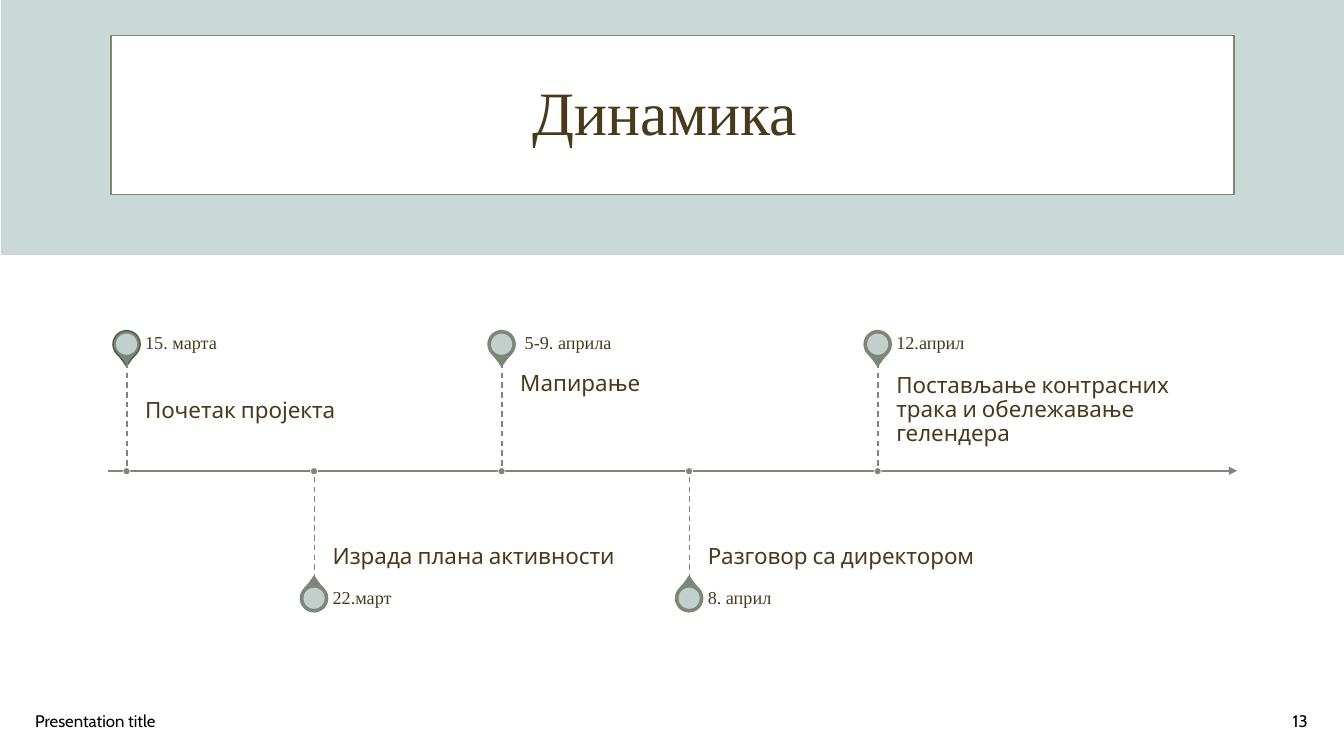
import pptx
import pptx.dml.color
import pptx.enum.dml
import pptx.enum.shapes
import pptx.enum.text
import pptx.oxml.ns
import pptx.util
from lxml import etree

RGBColor = pptx.dml.color.RGBColor
Shape = pptx.enum.shapes.MSO_SHAPE
Anchor = pptx.enum.text.MSO_ANCHOR
Align = pptx.enum.text.PP_ALIGN
qn = pptx.oxml.ns.qn

PALE = RGBColor(0xCA, 0xD8, 0xD6)
PALE_WARM = RGBColor(0xCC, 0xD8, 0xD6)
OLIVE = RGBColor(0x7E, 0x86, 0x79)
DARK_OLIVE = RGBColor(0x4F, 0x59, 0x45)
BROWN = RGBColor(0x4A, 0x3A, 0x1C)
BLACK = RGBColor(0, 0, 0)
WHITE = RGBColor(0xFF, 0xFF, 0xFF)
SERIF, SANS = "Times New Roman", "Cabin"

EMU_PER_PX = 9144  # 100 px to the inch
AXIS_Y = 467
FIRST_X = 126

# date, activity, top of the activity text, pin outline, disc colour
MILESTONES = [
    ("15. марта", "Почетак пројекта", 387, DARK_OLIVE, PALE),
    ("22.март", "Израда плана активности", 467, OLIVE, PALE),
    ("\u00a05-9. априла".replace("\u00a0", " "), "Мапирање", 360, OLIVE, PALE_WARM),
    ("8. април", "Разговор са директором", 467, OLIVE, PALE),
    ("12.април", "Постављање контрасних трака и обележавање гелендера",
     360, OLIVE, PALE_WARM),
]


def px(value):
    return pptx.util.Emu(value * EMU_PER_PX)


class TimelineSlide:
    def __init__(self, presentation):
        self.slide = presentation.slides.add_slide(presentation.slide_layouts[5])
        self.shapes = self.slide.shapes

    def format_text(self, shape, text, size, font, color, align=Align.LEFT,
                    anchor=Anchor.MIDDLE, insets=(10, 5, 10, 5), spacing=0.9):
        frame = shape.text_frame
        frame.word_wrap = True
        frame.vertical_anchor = anchor
        (frame.margin_left, frame.margin_top,
         frame.margin_right, frame.margin_bottom) = map(px, insets)
        paragraph = frame.paragraphs[0]
        paragraph.text = text
        paragraph.alignment = align
        paragraph.line_spacing = spacing
        paragraph.font.size = pptx.util.Pt(size)
        paragraph.font.name = font
        paragraph.font.color.rgb = color

    def title(self, box, text):
        """Place the title in front of the shapes drawn so far."""
        title = self.shapes.title
        title.left, title.top, title.width, title.height = map(px, box)
        self.format_text(title, text, 44, SERIF, BROWN, Align.CENTER)
        title.element.getparent().append(title.element)

    def text(self, box, text, size, font, color, **style):
        self.format_text(self.shapes.add_textbox(*map(px, box)),
                         text, size, font, color, **style)

    def shape(self, kind, box, fill, line=None, width=1):
        shape = self.shapes.add_shape(kind, *map(px, box))
        shape.shadow.inherit = False
        shape.fill.solid()
        shape.fill.fore_color.rgb = fill
        if line is None:
            shape.line.fill.background()
        else:
            shape.line.color.rgb = line
            shape.line.width = pptx.util.Pt(width)
        return shape

    def line(self, start, end, width, dashed=False, arrow=False):
        connector = self.shapes.add_connector(
            pptx.enum.shapes.MSO_CONNECTOR.STRAIGHT, *map(px, start + end))
        connector.line.color.rgb = OLIVE
        connector.line.width = pptx.util.Pt(width)
        if dashed:
            connector.line.dash_style = pptx.enum.dml.MSO_LINE.DASH
        if arrow:
            etree.SubElement(connector.line._get_or_add_ln(), qn("a:tailEnd"), type="triangle")
        etree.SubElement(connector.element.spPr, qn("a:effectLst"))

    def pin(self, x, top, rotation, outline, disc_color):
        drop = self.shape(Shape.TEAR, (x - 14, top, 27, 27), OLIVE, outline)
        drop.adjustments[0] = 1.15
        drop.rotation = rotation
        disc = self.shape(Shape.OVAL, (x - 11, top + 3, 21, 21), disc_color)
        color = disc.element.spPr.find(qn("a:solidFill"))[0]
        etree.SubElement(color, qn("a:alpha"), val="90000")

    def milestone(self, x, above, date, activity, activity_top, outline, disc_color):
        if above:
            pin_top, rotation, date_top, tip = 328, 135, 322, 360
            bottom, anchor, insets = AXIS_Y, Anchor.TOP, (0, 11, 11, 17)
        else:
            pin_top, rotation, date_top, tip = 580, 315, 575, 575
            bottom, anchor, insets = 574, Anchor.BOTTOM, (0, 17, 0, 11)
        self.pin(x, pin_top, rotation, outline, disc_color)
        self.text((x + 18, activity_top, 310, bottom - activity_top), activity,
                  16, SANS, BROWN, anchor=anchor, insets=insets)
        self.text((x + 18, date_top, 310, 38), date, 13, SERIF, BROWN,
                  insets=(0, 0, 9, 0))
        self.line((x, tip), (x, AXIS_Y), 1, dashed=True)
        self.shape(Shape.OVAL, (x - 4, AXIS_Y - 3, 7, 7), OLIVE, WHITE, 0.5)


def main():
    presentation = pptx.Presentation()
    presentation.slide_width, presentation.slide_height = px(1333), px(750)
    timeline = TimelineSlide(presentation)

    timeline.shape(Shape.RECTANGLE, (1, 0, 1333, 253), PALE)
    timeline.shape(Shape.RECTANGLE, (110, 35, 1114, 158), WHITE, OLIVE)
    timeline.title((42, 42, 1250, 145), "Динамика ")
    timeline.text((25, 695, 450, 40), "Presentation title", 12, SANS, BLACK, spacing=1.0)
    timeline.text((1007, 695, 300, 40), "13", 12, SANS, BLACK,
                  align=Align.RIGHT, spacing=1.0)

    timeline.line((107, AXIS_Y), (1227, AXIS_Y), 1.5, arrow=True)
    for index, milestone in enumerate(MILESTONES):
        x = FIRST_X + index * 745 // 4
        timeline.milestone(x, index % 2 == 0, *milestone)

    presentation.save("out.pptx")


if __name__ == "__main__":
    main()
